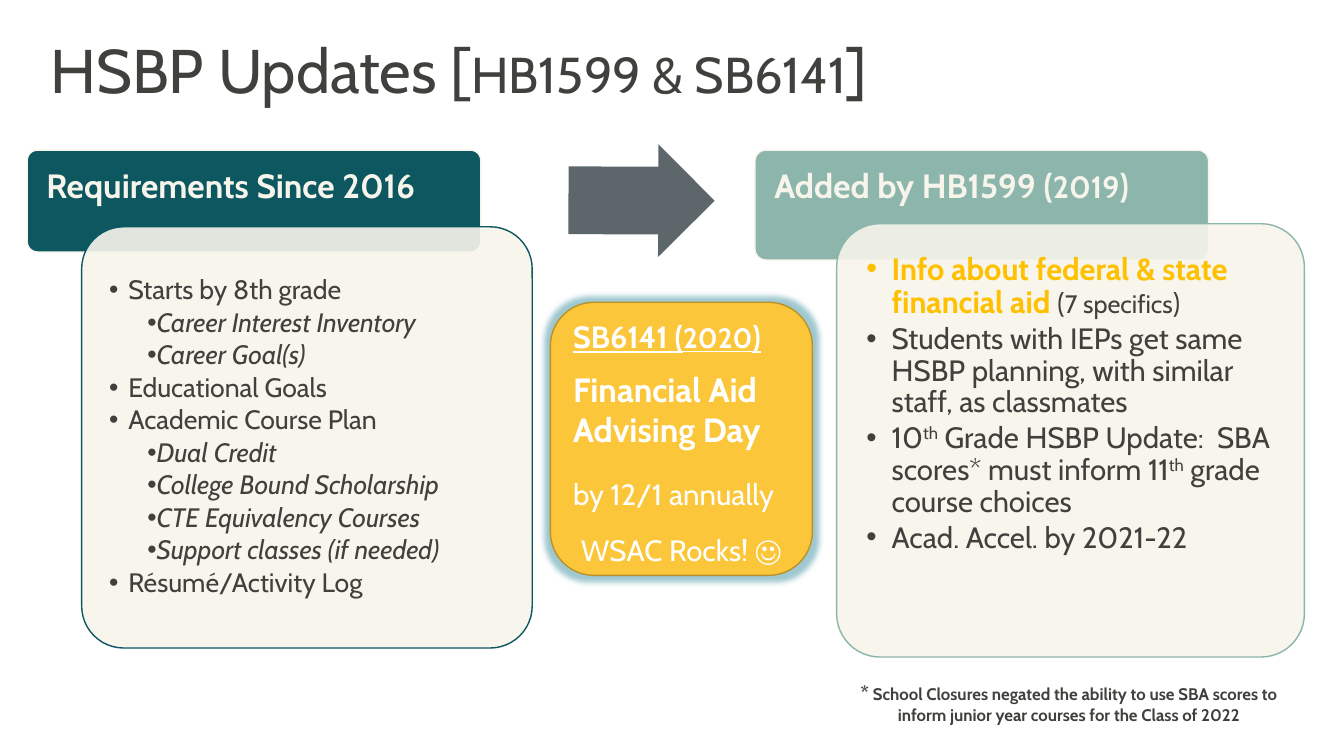
from pptx import Presentation
from pptx import util as u
from pptx.dml.color import RGBColor
from pptx.enum import shapes, text
from pptx.oxml import parse_xml
from pptx.oxml.ns import nsdecls, qn

THEME = {
    "font": "Cabin",
    "ink": "40403D", "cream": "F7F5EB", "white": "FFFFFF", "amber": "FFC000",
    "teal": "0D5761", "sage": "8CB5AB", "slate": "5D676B",
    "gold": "FBC639", "bronze": "BA922A", "glow": "5FA3B0",
    "title": 44, "subtitle": 36, "heading": 24, "lead": 22, "body": 21,
    "medium": 20, "list": 19, "small": 18, "mark": 14, "note": 12,
}

deck = Presentation()
deck.slide_width, deck.slide_height = u.Inches(13.33), u.Inches(7.5)
page = deck.slides.add_slide(deck.slide_layouts[6])
CELL = deck.slide_width / 40  # square grid: 40 columns, 22.5 rows


def add_box(grid, kind=None, fill=None, line=None, corner=None):
    """Place a shape, or a text box when no kind is given; grid is column, row, columns, rows."""
    place = [round(value * CELL) for value in grid]
    if kind is None:
        box = page.shapes.add_textbox(*place)
    else:
        box = page.shapes.add_shape(kind, *place)
        box.shadow.inherit = False
        box.fill.solid()
        box.fill.fore_color.rgb = RGBColor.from_string(THEME[fill])
        if line:
            box.line.color.rgb = RGBColor.from_string(THEME[line])
            box.line.width = u.Pt(1)
        else:
            box.line.fill.background()
    if corner:
        box.adjustments[0] = corner
    box.text_frame.word_wrap = True
    return box


def write(box, paras, insets=(0.1, 0.05, 0.1, 0.05), anchor="TOP", spacing=1.0, align="LEFT"):
    """Each paragraph is (options, runs); each run is (text, size, colour, styles)."""
    frame = box.text_frame
    frame.vertical_anchor = text.MSO_ANCHOR[anchor]
    frame.margin_left, frame.margin_top, frame.margin_right, frame.margin_bottom = map(u.Inches, insets)
    for index, (options, runs) in enumerate(paras):
        para = frame.paragraphs[0] if index == 0 else frame.add_paragraph()
        if "bullet" in options:
            left, indent, level = options["bullet"]
            para.level = level
            props = para._p.get_or_add_pPr()
            props.set("marL", str(u.Inches(left)))
            props.set("indent", str(u.Inches(indent)))
            props.append(parse_xml(f'<a:buFont {nsdecls("a")} typeface="Arial"/>'))
            props.append(parse_xml(f'<a:buChar {nsdecls("a")} char="•"/>'))
        para.alignment = text.PP_ALIGN[options.get("align", align)]
        para.line_spacing = spacing
        para.space_before = u.Pt(options.get("before", 0))
        para.space_after = u.Pt(options.get("after", 0))
        for words, size, colour, styles in runs:
            span = para.add_run()
            span.text = words
            span.font.name = THEME["font"]
            span.font.size = u.Pt(THEME[size])
            span.font.color.rgb = RGBColor.from_string(THEME[colour])
            span.font.bold = "b" in styles
            span.font.italic = "i" in styles
            span.font.underline = "u" in styles
            if "^" in styles:
                span.font._element.set("baseline", "30000")


ROUND = shapes.MSO_SHAPE.ROUNDED_RECTANGLE

# Title
title = add_box((1.2, 0.75, 37.65, 2.88))
write(title, [({}, [("HSBP Updates [", "title", "ink", ""),
                    ("HB1599 & SB6141", "subtitle", "ink", ""),
                    ("]", "title", "ink", "")])], anchor="MIDDLE", spacing=0.9)

# Text of the two panels
since_heading = [("Requirements Since 2016", "heading", "cream", "b")]
added_heading = [("Added by HB1599 (", "heading", "cream", "b"),
                 ("2019", "lead", "cream", "b"), (")", "heading", "cream", "b")]

requirements = [
    ("Starts by 8th grade", ["Career Interest Inventory", "Career Goal(s)"]),
    ("Educational Goals", []),
    ("Academic Course Plan", ["Dual Credit", "College Bound Scholarship",
                              "CTE Equivalency Courses", "Support classes (if needed)"]),
    ("Résumé/Activity Log", []),
]
since_list = []
for topic, details in requirements:
    since_list.append(({"bullet": (0.19, -0.19, 1), "after": 2.7}, [(topic, "list", "ink", "")]))
    for detail in details:
        since_list.append(({"bullet": (0.38, 0, 2), "after": 2.7}, [(detail, "list", "ink", "i")]))

additions = [
    [("Info about federal & state financial aid ", "lead", "amber", "b"),
     ("(", "medium", "ink", ""), ("7 specifics", "small", "ink", ""), (")", "medium", "ink", "")],
    [("Students with IEPs get same HSBP planning, with similar staff, as classmates", "body", "ink", "")],
    [("10", "body", "ink", ""), ("th", "body", "ink", "^"),
     (" Grade HSBP Update:  SBA scores* must inform 11", "body", "ink", ""),
     ("th", "body", "ink", "^"), (" grade course choices", "body", "ink", "")],
    [("Acad. Accel. by 2021-22", "body", "ink", "")],
]
added_list = [({"bullet": (0.25, -0.25, 1), "after": 2.9}, runs) for runs in additions]

# Panels: a coloured header with a translucent card over it
panels = [
    ("teal", (0.81, 4.47, 13.5, 3.03), since_heading, (2.43, 6.75, 13.41, 12.54), since_list, 0.15, "MIDDLE"),
    ("sage", (22.47, 4.47, 13.5, 3.27), added_heading, (24.9, 6.66, 13.92, 12.9), added_list, 0.17, "TOP"),
]
for colour, header_grid, heading, card_grid, items, inset, anchor in panels:
    header = add_box(header_grid, ROUND, colour, "cream", corner=0.1)
    write(header, [({}, heading)], insets=(0.16, 0.16, 0.16, 0.1), spacing=0.9)
    card = add_box(card_grid, ROUND, "cream", colour, corner=0.1)
    tint = card._element.spPr.find(qn("a:solidFill"))[0]
    tint.append(parse_xml(f'<a:alpha {nsdecls("a")} val="90000"/>'))
    write(card, items, insets=(inset,) * 4, anchor=anchor, spacing=0.9)

# Arrow from the old requirements to the new ones
arrow = add_box((16.92, 4.29, 4.35, 3.36), shapes.MSO_SHAPE.RIGHT_ARROW, "slate")
arrow.adjustments[0], arrow.adjustments[1] = 0.6, 0.5
arrow.rotation = 0.2

# Glowing advising-day box
advising = add_box((16.38, 9, 7.8, 8.13), ROUND, "gold", "bronze")
advising._element.spPr.find(qn("a:effectLst")).append(parse_xml(
    f'<a:glow {nsdecls("a")} rad="{u.Pt(8)}"><a:srgbClr val="{THEME["glow"]}">'
    '<a:alpha val="60000"/></a:srgbClr></a:glow>'))
write(advising, [
    ({}, [("SB6141 (", "lead", "white", "bu"), ("2020", "medium", "white", "bu"),
          (")", "lead", "white", "bu")]),
    ({"before": 9.7}, [("Financial Aid Advising Day", "heading", "white", "b")]),
    ({"before": 19.5}, [("by 12/1 annually", "body", "white", "")]),
    ({"before": 14.6, "align": "CENTER"}, [("WSAC Rocks! ☺", "body", "white", "")]),
], insets=(0.1, 0.03, 0.1, 0))

# Footnote
footnote = add_box((25.05, 20.13, 13.53, 1.62))
write(footnote, [({}, [
    ("*", "mark", "ink", "b"), (" ", "note", "ink", ""),
    ("School Closures negated the ability to use SBA scores to inform junior year courses "
     "for the Class of 2022", "note", "ink", "b")])], align="CENTER")

deck.save("out.pptx")
